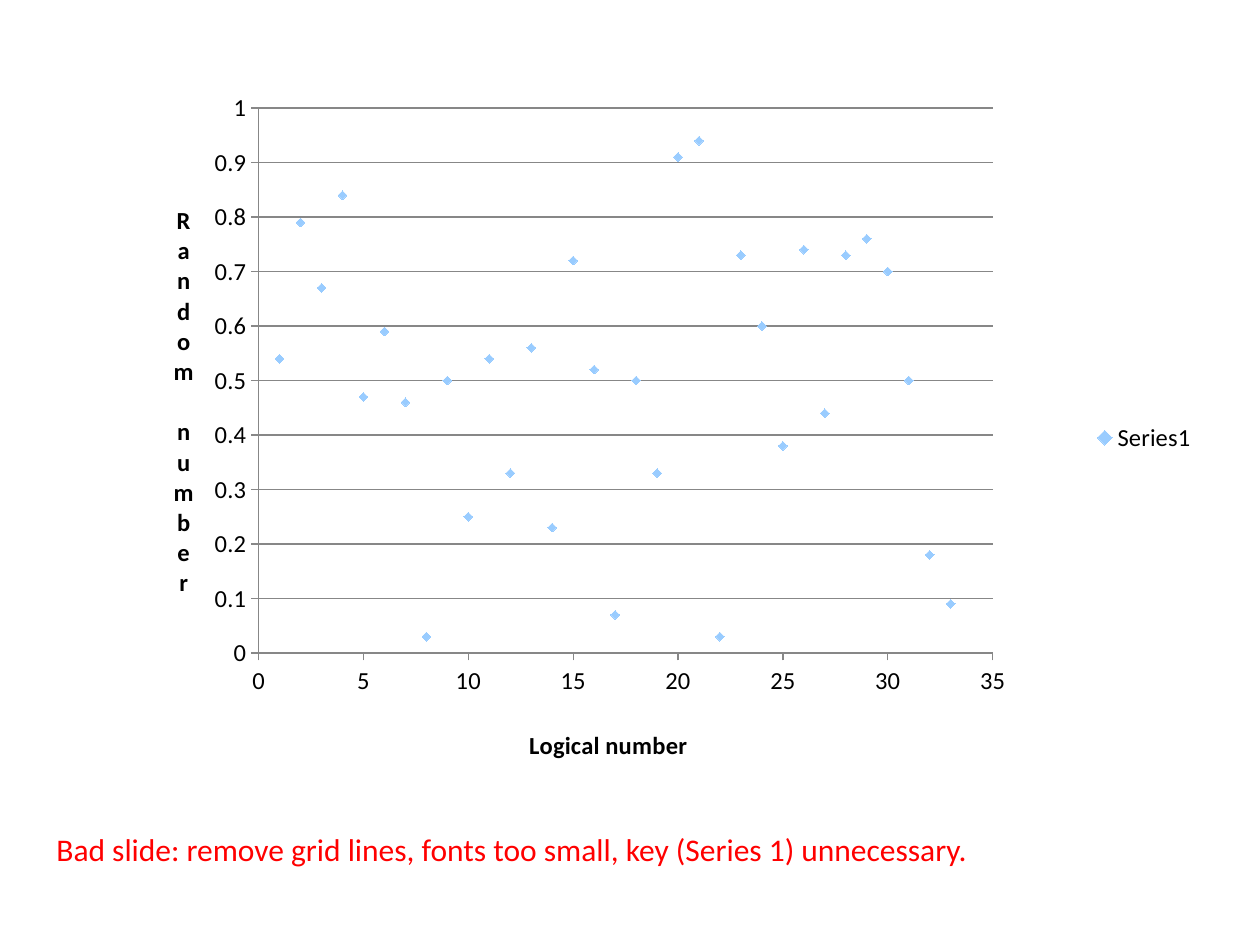
from lxml.etree import SubElement
from pptx import Presentation
from pptx.chart.data import XyChartData
from pptx.dml.color import RGBColor
from pptx.enum.chart import XL_CHART_TYPE, XL_LEGEND_POSITION, XL_MARKER_STYLE, XL_TICK_MARK
from pptx.oxml.ns import qn
from pptx.util import Emu, Pt

COLORS = {"text": "000000", "comment": "FF0000", "point": "99CCFF", "line": "878787"}
FONT = "Calibri"
EMU_PER_PX = 914400 / 126

RANDOM_NUMBERS = [
    0.54, 0.79, 0.67, 0.84, 0.47, 0.59, 0.46, 0.03, 0.5, 0.25, 0.54,
    0.33, 0.56, 0.23, 0.72, 0.52, 0.07, 0.5, 0.33, 0.91, 0.94, 0.03,
    0.73, 0.6, 0.38, 0.74, 0.44, 0.73, 0.76, 0.7, 0.5, 0.18, 0.09,
]


def px(length):
    return Emu(round(length * EMU_PER_PX))


def color(name):
    return RGBColor.from_string(COLORS[name])


def place(part, position, after=None, inner=False):
    """Give a chart part a manual layout in fractions of the chart."""
    layout = part.find(qn("c:layout"))
    if layout is None:
        layout = SubElement(part, qn("c:layout"))
    if after is None:
        part.insert(0, layout)
    else:
        part.find(qn(after)).addnext(layout)
    for child in list(layout):
        layout.remove(child)
    manual = SubElement(layout, qn("c:manualLayout"))
    settings = [("layoutTarget", "inner")] if inner else []
    settings += [("xMode", "edge"), ("yMode", "edge"), *zip("xywh", position)]
    for tag, value in settings:
        SubElement(manual, qn(f"c:{tag}")).set("val", str(value))


class SlideBuilder:
    def __init__(self, slide):
        self.slide = slide

    def style(self, font, size, color_name, bold=False):
        font.name, font.size, font.bold = FONT, Pt(size), bold
        font.color.rgb = color(color_name)

    def text(self, words, left, top, width, height, size, color_name):
        box = self.slide.shapes.add_textbox(px(left), px(top), px(width), px(height))
        box.text_frame.word_wrap = True
        box.text_frame.text = words
        self.style(box.text_frame.paragraphs[0].runs[0].font, size, color_name)

    def axis(self, axis, title, title_position, maximum, step):
        axis.minimum_scale, axis.maximum_scale, axis.major_unit = 0, maximum, step
        axis.major_tick_mark = XL_TICK_MARK.OUTSIDE
        axis.minor_tick_mark = XL_TICK_MARK.NONE
        axis.tick_labels.number_format = "General"
        axis.tick_labels.number_format_is_linked = False
        axis.has_major_gridlines = False
        axis.format.line.color.rgb = color("line")
        axis.format.line.width = Pt(0.75)
        frame = axis.axis_title.text_frame
        frame.text = title
        self.style(frame.paragraphs[0].runs[0].font, 14, "text", bold=True)
        place(axis.axis_title._element, title_position, after="c:tx")

    def scatter(self, name, values, left, top, width, height):
        data = XyChartData()
        points = data.add_series(name)
        for number, value in enumerate(values, 1):
            points.add_data_point(number, value)
        chart = self.slide.shapes.add_chart(
            XL_CHART_TYPE.XY_SCATTER, px(left), px(top), px(width), px(height), data
        ).chart
        chart.has_title = False
        self.style(chart.font, 14, "text")
        place(chart.plots[0]._element.getparent(), (0.168, 0.083, 0.64, 0.706), inner=True)

        # Points without a joining line
        chart.plots[0].vary_by_categories = False
        series = chart.series[0]
        series.format.line.fill.background()
        series.marker.style = XL_MARKER_STYLE.DIAMOND
        series.marker.size = 5
        series.marker.format.fill.solid()
        series.marker.format.fill.fore_color.rgb = color("point")
        series.marker.format.line.fill.background()

        # Axes, with the vertical title stacked letter by letter
        self.axis(chart.category_axis, "Logical number", (0.4, 0.88), 35, 5)
        value_axis = chart.value_axis
        self.axis(value_axis, "Random number", (0.09, 0.2), 1, 0.1)
        value_axis.axis_title.text_frame._txBody.bodyPr.set("rot", "0")
        value_axis.axis_title.text_frame._txBody.bodyPr.set("vert", "wordArtVert")
        value_axis.has_major_gridlines = True
        value_axis.major_gridlines.format.line.color.rgb = color("line")
        value_axis.major_gridlines.format.line.width = Pt(0.75)

        # Key
        chart.has_legend = True
        chart.legend.position = XL_LEGEND_POSITION.RIGHT
        chart.legend.include_in_layout = False
        self.style(chart.legend.font, 14, "text")
        place(chart.legend._element, (0.89, 0.48, 0.1, 0.06), after="c:legendPos")


def main():
    deck = Presentation()
    deck.slide_width, deck.slide_height = px(1260), px(945)
    builder = SlideBuilder(deck.slides.add_slide(deck.slide_layouts[6]))
    builder.text(
        "Bad slide: remove grid lines, fonts too small, key (Series 1) unnecessary.",
        44, 824, 1177, 50, 18, "comment",
    )
    builder.scatter("Series1", RANDOM_NUMBERS, 66, 44, 1147, 772)
    deck.save("out.pptx")


if __name__ == "__main__":
    main()
